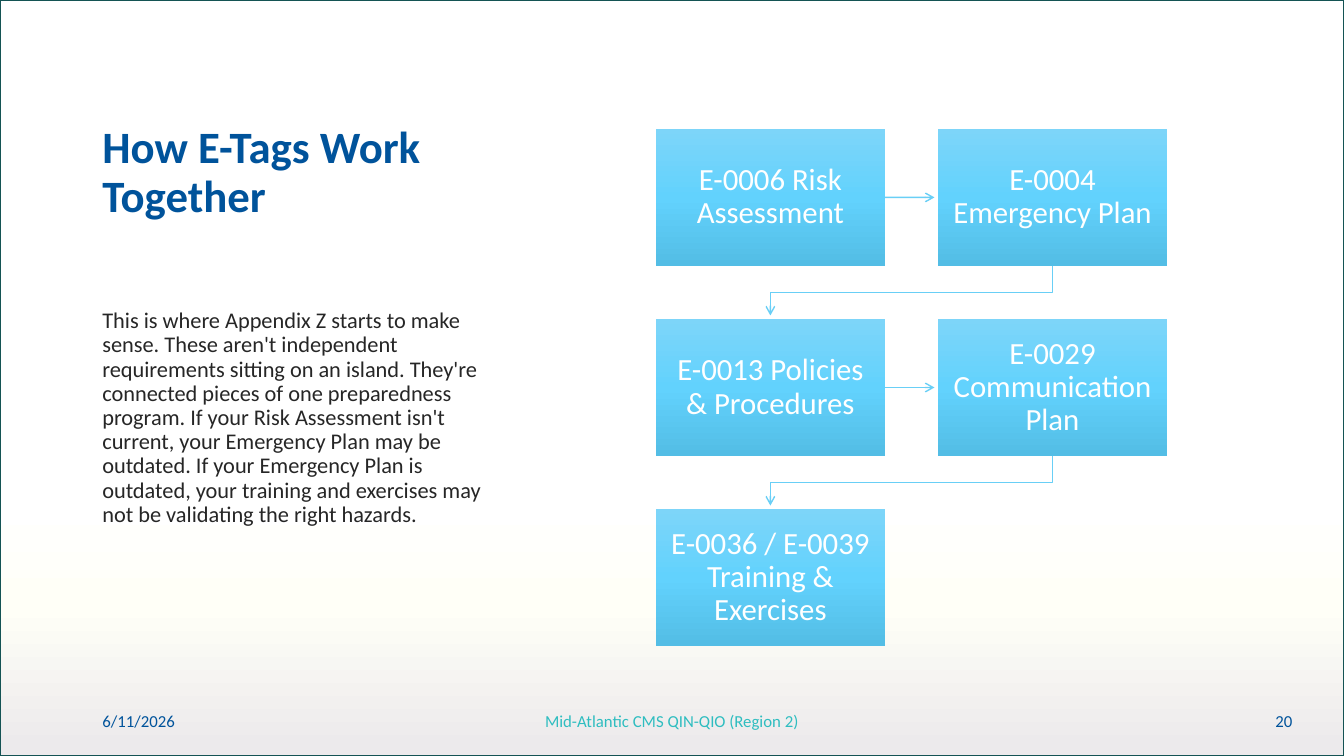
from copy import deepcopy
from dataclasses import dataclass
from itertools import pairwise

from lxml.etree import SubElement
from pptx import Presentation
from pptx.dml.color import RGBColor
from pptx.enum.shapes import MSO_CONNECTOR as Connector, MSO_SHAPE as Preset
from pptx.enum.text import MSO_ANCHOR as Anchor, PP_ALIGN as Align
from pptx.oxml.ns import qn
from pptx.util import Cm, Pt


@dataclass(frozen=True)
class Theme:
    font: str = "Calibri"
    navy: str = "00539B"
    teal: str = "2EBDC0"
    ink: str = "262626"
    white: str = "FFFFFF"
    arrow: str = "69CFF6"
    frame: str = "145354"
    backdrop: tuple = ((0.66, "FFFFFF"), (0.8, "FFFFF7"), (0.99, "ECEAEC"))
    box: tuple = ((0, "7DD5F9"), (0.5, "62D2FD"), (1, "53BDE5"))
    title_size: int = 32
    box_size: int = 22
    body_size: int = 16
    footer_size: int = 12


@dataclass(frozen=True)
class TextBlock:
    text: str
    left: float
    top: float
    width: float
    height: float
    size: int
    color: str
    bold: bool = False
    align: Align = Align.LEFT
    anchor: Anchor = Anchor.MIDDLE
    spacing: float = 1.0
    inset_top: float = 0.13


@dataclass(frozen=True)
class Step:
    text: str
    column: int
    row: int

    @property
    def left(self) -> float:
        return GRID_LEFT + self.column * COLUMN_PITCH

    @property
    def top(self) -> float:
        return GRID_TOP + self.row * ROW_PITCH

    @property
    def center(self) -> float:
        return self.left + BOX_WIDTH / 2


THEME = Theme()
SLIDE_WIDTH, SLIDE_HEIGHT = 33.87, 19.05
MARGIN, COLUMN_WIDTH = 2.33, 10.92
FOOTER_TOP, FOOTER_HEIGHT = 17.65, 1.02
GRID_LEFT, GRID_TOP = 16.53, 3.25
COLUMN_PITCH, ROW_PITCH = 7.11, 4.79
BOX_WIDTH, BOX_HEIGHT = 5.77, 3.45
TIP_GAP = 0.09

TEXT_BLOCKS = (
    TextBlock("How E-Tags Work Together", MARGIN, 2.29, COLUMN_WIDTH, 3.43,
              THEME.title_size, THEME.navy, bold=True, anchor=Anchor.BOTTOM, spacing=0.9),
    TextBlock("This is where Appendix Z starts to make sense. These aren't independent "
              "requirements sitting on an island. They're connected pieces of one "
              "preparedness program. If your Risk Assessment isn't current, your "
              "Emergency Plan may be outdated. If your Emergency Plan is outdated, your "
              "training and exercises may not be validating the right hazards.",
              MARGIN, 5.72, COLUMN_WIDTH, 10.59, THEME.body_size, THEME.ink,
              anchor=Anchor.TOP, spacing=0.9, inset_top=2.08),
    TextBlock("6/11/2026", MARGIN, FOOTER_TOP, 4.7, FOOTER_HEIGHT,
              THEME.footer_size, THEME.navy),
    TextBlock("Mid-Atlantic CMS QIN-QIO (Region 2)", 11.22, FOOTER_TOP, 11.43, FOOTER_HEIGHT,
              THEME.footer_size, THEME.teal, align=Align.CENTER),
    TextBlock("20", 25.2, FOOTER_TOP, 7.62, FOOTER_HEIGHT,
              THEME.footer_size, THEME.navy, align=Align.RIGHT),
)

STEPS = tuple(
    Step(text, index % 2, index // 2)
    for index, text in enumerate((
        "E-0006 Risk Assessment",
        "E-0004 Emergency Plan",
        "E-0013 Policies & Procedures",
        "E-0029 Communication Plan",
        "E-0036 / E-0039 Training & Exercises",
    ))
)


def write_text(shape, text: str, size: int, color: str, bold: bool,
               align: Align, anchor: Anchor, spacing: float) -> None:
    frame = shape.text_frame
    frame.word_wrap = True
    frame.vertical_anchor = anchor
    paragraph = frame.paragraphs[0]
    paragraph.text = text
    paragraph.alignment = align
    paragraph.line_spacing = spacing
    paragraph.font.name = THEME.font
    paragraph.font.size = Pt(size)
    paragraph.font.bold = bold
    paragraph.font.color.rgb = RGBColor.from_string(color)


def add_text_block(slide, block: TextBlock) -> None:
    shape = slide.shapes.add_textbox(
        Cm(block.left), Cm(block.top), Cm(block.width), Cm(block.height))
    write_text(shape, block.text, block.size, block.color, block.bold,
               block.align, block.anchor, block.spacing)
    shape.text_frame.margin_top = Cm(block.inset_top)


def add_gradient_rectangle(slide, left: float, top: float, width: float,
                           height: float, stops: tuple):
    shape = slide.shapes.add_shape(
        Preset.RECTANGLE, Cm(left), Cm(top), Cm(width), Cm(height))
    shape.shadow.inherit = False
    shape.line.fill.background()
    shape.fill.gradient()
    shape.fill.gradient_angle = 270
    stop_list = next(shape._element.spPr.iter(qn("a:gsLst")))
    stop_list.append(deepcopy(stop_list[-1]))
    for stop, (position, color) in zip(shape.fill.gradient_stops, stops):
        stop.position = position
        stop.color.rgb = RGBColor.from_string(color)
    return shape


def add_step(slide, step: Step):
    shape = add_gradient_rectangle(
        slide, step.left, step.top, BOX_WIDTH, BOX_HEIGHT, THEME.box)
    write_text(shape, step.text, THEME.box_size, THEME.white, False,
               Align.CENTER, Anchor.MIDDLE, 0.9)
    frame = shape.text_frame
    frame.margin_left = frame.margin_right = Cm(0.28)
    frame.margin_top = frame.margin_bottom = Cm(0.3)
    return shape


def style_arrow(shape) -> None:
    shape.line.color.rgb = RGBColor.from_string(THEME.arrow)
    shape.line.width = Pt(1)
    properties = shape._element.spPr
    SubElement(properties.find(qn("a:ln")), qn("a:tailEnd"), type="arrow")
    SubElement(properties, qn("a:effectLst"))


def add_straight_arrow(slide, source_shape, source: Step, target: Step) -> None:
    middle = Cm(source.top + BOX_HEIGHT / 2)
    connector = slide.shapes.add_connector(
        Connector.STRAIGHT, Cm(source.left + BOX_WIDTH), middle,
        Cm(target.left - TIP_GAP), middle)
    connector.begin_connect(source_shape, 3)
    style_arrow(connector)


def add_elbow_arrow(slide, source: Step, target: Step) -> None:
    bottom = source.top + BOX_HEIGHT
    bend = (bottom + target.top) / 2
    builder = slide.shapes.build_freeform(Cm(source.center), Cm(bottom))
    builder.add_line_segments(
        [(Cm(source.center), Cm(bend)),
         (Cm(target.center), Cm(bend)),
         (Cm(target.center), Cm(target.top - TIP_GAP))],
        close=False)
    shape = builder.convert_to_shape()
    shape.fill.background()
    style_arrow(shape)


def main() -> None:
    presentation = Presentation()
    presentation.slide_width = Cm(SLIDE_WIDTH)
    presentation.slide_height = Cm(SLIDE_HEIGHT)
    slide = presentation.slides.add_slide(presentation.slide_layouts[6])

    backdrop = add_gradient_rectangle(
        slide, 0, 0, SLIDE_WIDTH, SLIDE_HEIGHT, THEME.backdrop)
    backdrop.line.color.rgb = RGBColor.from_string(THEME.frame)
    backdrop.line.width = Pt(1.5)

    for block in TEXT_BLOCKS:
        add_text_block(slide, block)

    step_shapes = [add_step(slide, step) for step in STEPS]
    for shape, (source, target) in zip(step_shapes, pairwise(STEPS)):
        if source.row == target.row:
            add_straight_arrow(slide, shape, source, target)
        else:
            add_elbow_arrow(slide, source, target)

    presentation.save("out.pptx")


if __name__ == "__main__":
    main()
